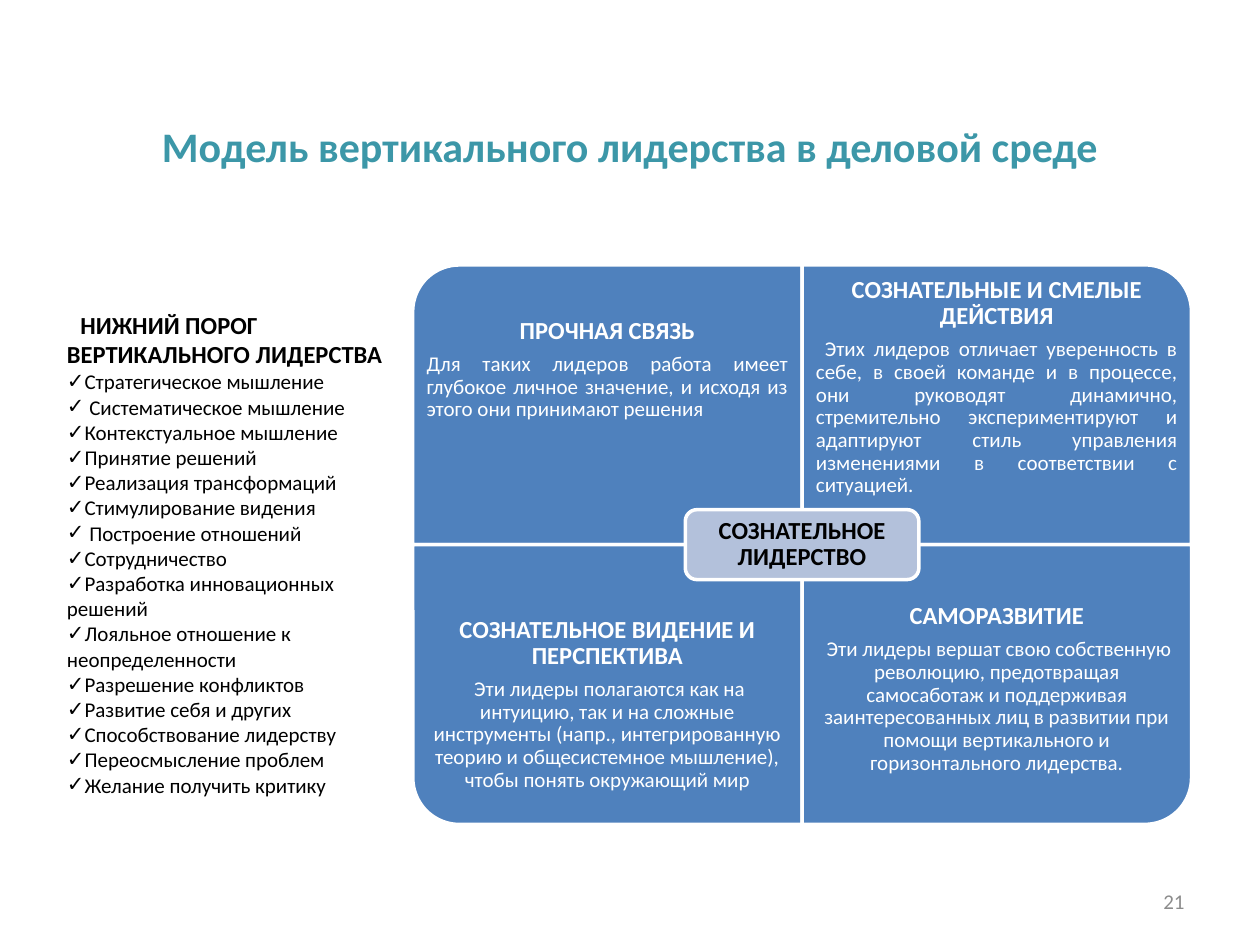
from pptx import Presentation
from pptx.dml.color import RGBColor
from pptx.enum.shapes import MSO_SHAPE
from pptx.enum.text import MSO_ANCHOR, MSO_AUTO_SIZE, PP_ALIGN
from pptx.oxml.ns import qn
from pptx.util import Cm, Pt
from lxml import etree

LEFT, CENTER, RIGHT, JUSTIFY = PP_ALIGN.LEFT, PP_ALIGN.CENTER, PP_ALIGN.RIGHT, PP_ALIGN.JUSTIFY
TOP, MIDDLE, BOTTOM = MSO_ANCHOR.TOP, MSO_ANCHOR.MIDDLE, MSO_ANCHOR.BOTTOM
ONE_ROUND, ALL_ROUND = MSO_SHAPE.ROUND_1_RECTANGLE, MSO_SHAPE.ROUNDED_RECTANGLE
FONT = "Calibri"
COLORS = {"title": "3C97A8", "quadrant": "4F81BD", "core": "B3C1DB",
          "white": "FFFFFF", "black": "000000", "number": "8C8C8C"}

SKILLS = [
    "Стратегическое мышление", " Систематическое мышление", "Контекстуальное мышление",
    "Принятие решений", "Реализация трансформаций", "Стимулирование видения",
    " Построение отношений", "Сотрудничество", "Разработка инновационных решений",
    "Лояльное отношение к неопределенности", "Разрешение конфликтов",
    "Развитие себя и других", "Способствование лидерству", "Переосмысление проблем",
    "Желание получить критику",
]
# Row by row: heading, text, alignment, rotation, extra top and bottom inset in cm
QUADRANTS = [
    ("ПРОЧНАЯ СВЯЗЬ",
     "Для таких лидеров работа имеет глубокое личное значение, и исходя из этого "
     "они принимают решения", JUSTIFY, 270, 0, 0),
    ("СОЗНАТЕЛЬНЫЕ И СМЕЛЫЕ ДЕЙСТВИЯ",
     " Этих лидеров отличает уверенность в себе, в своей команде и в процессе, они "
     "руководят динамично, стремительно экспериментируют и адаптируют стиль управления "
     "изменениями в соответствии с ситуацией. ", JUSTIFY, 0, 0.71, 0),
    ("СОЗНАТЕЛЬНОЕ ВИДЕНИЕ И ПЕРСПЕКТИВА",
     " Эти лидеры полагаются как на интуицию, так и на сложные инструменты (напр., "
     "интегрированную теорию и общесистемное мышление), чтобы понять окружающий мир",
     CENTER, 180, 0, 0.61),
    ("САМОРАЗВИТИЕ",
     " Эти лидеры вершат свою собственную революцию, предотвращая самосаботаж и "
     "поддерживая заинтересованных лиц в развитии при помощи вертикального и "
     "горизонтального лидерства.", CENTER, 90, 0, 1.22),
]


def set_frame(frame, anchor=MIDDLE, insets=(0.25, 0.13, 0.25, 0.13)):
    frame.word_wrap = True
    frame.auto_size = MSO_AUTO_SIZE.NONE
    frame.vertical_anchor = anchor
    frame.margin_left, frame.margin_top, frame.margin_right, frame.margin_bottom = map(Cm, insets)


def write(frame, text, size=12, color="black", bold=False, align=LEFT, spacing=1.0,
          after=0, indent=0, bullet=None):
    """Fill the first empty paragraph or add one, and format it."""
    para = frame.paragraphs[-1]
    if para.text:
        para = frame.add_paragraph()
    para.text = text
    para.alignment = align
    para.line_spacing = spacing
    para.space_before, para.space_after = Pt(0), Pt(after)
    for span in para.runs:
        span.font.name, span.font.size, span.font.bold = FONT, Pt(size), bold
        span.font.color.rgb = RGBColor.from_string(COLORS[color])
    properties = para._p.get_or_add_pPr()
    properties.set("marL", "0")
    properties.set("indent", str(Cm(indent)))
    if bullet:
        etree.SubElement(properties, qn("a:buChar")).set("char", bullet)
    else:
        etree.SubElement(properties, qn("a:buNone"))


def place(shape, box):
    shape.left, shape.top, shape.width, shape.height = map(Cm, box)


def add_panel(shapes, kind, box, color, rotation=0):
    left, top, width, height = box
    if rotation % 180:  # a quarter turn swaps the sides around the same centre
        left, top = left + (width - height) / 2, top + (height - width) / 2
        width, height = height, width
    panel = shapes.add_shape(kind, Cm(left), Cm(top), Cm(width), Cm(height))
    panel.rotation = rotation
    panel.shadow.inherit = False
    panel.fill.solid()
    panel.fill.fore_color.rgb = RGBColor.from_string(COLORS[color])
    panel.line.color.rgb = RGBColor.from_string(COLORS["white"])
    panel.line.width = Pt(2)
    return panel


def build_title(page, box):
    title = page.shapes.title
    place(title, box)
    set_frame(title.text_frame, BOTTOM, (0.25, 0.13, 0.25, 0.5))
    write(title.text_frame, "Модель вертикального лидерства в деловой среде",
          size=24, color="title", bold=True, align=CENTER)


def build_skills(page, box):
    body = page.placeholders[1]
    place(body, box)
    set_frame(body.text_frame, TOP)
    write(body.text_frame, "НИЖНИЙ ПОРОГ\vВЕРТИКАЛЬНОГО ЛИДЕРСТВА", size=14, bold=True, indent=0.27)
    for skill in SKILLS:
        write(body.text_frame, skill, bullet="✓")


def build_matrix(page, box):
    left, top, width, height = box
    cell_width, cell_height = width / 2, height / 2
    shapes = page.shapes.add_group_shape().shapes

    # Four quadrants, each with its outer corner rounded
    for index, (heading, text, align, rotation, extra_top, extra_bottom) in enumerate(QUADRANTS):
        row, column = divmod(index, 2)
        x, y = left + column * cell_width, top + row * cell_height
        add_panel(shapes, ONE_ROUND, (x, y, cell_width, cell_height), "quadrant", rotation)
        caption = shapes.add_textbox(Cm(x), Cm(y + row * cell_height / 4),
                                     Cm(cell_width), Cm(cell_height * 0.75))
        set_frame(caption.text_frame, MIDDLE, (0.28, 0.28 + extra_top, 0.28, 0.28 + extra_bottom))
        write(caption.text_frame, heading, size=14, color="white", bold=True,
              align=CENTER, spacing=0.9, after=4.9)
        write(caption.text_frame, text, color="white", align=align, spacing=0.9, after=4.2)

    # Core label over the crossing
    core_width, core_height = cell_width * 0.6, cell_height / 4
    core = add_panel(shapes, ALL_ROUND, (left + (width - core_width) / 2,
                     top + (height - core_height) / 2, core_width, core_height), "core")
    set_frame(core.text_frame, MIDDLE, (0.15, 0.15, 0.15, 0.15))
    write(core.text_frame, "СОЗНАТЕЛЬНОЕ ЛИДЕРСТВО", size=14, bold=True,
          align=CENTER, spacing=0.9, after=4.9)


def build_number(page, box):
    number = page.shapes.add_textbox(*map(Cm, box))
    set_frame(number.text_frame)
    write(number.text_frame, "21", color="number", align=RIGHT)


def main():
    deck = Presentation()
    deck.slide_width, deck.slide_height = Cm(25.4), Cm(19.05)
    page = deck.slides.add_slide(deck.slide_layouts[1])
    build_title(page, (1.27, 0.76, 22.86, 3.18))
    build_skills(page, (1.1, 6.12, 7.01, 10.19))
    build_matrix(page, (8.32, 5.34, 15.7, 11.28))
    build_number(page, (18.2, 17.66, 5.93, 1.01))
    deck.save("out.pptx")


if __name__ == "__main__":
    main()
